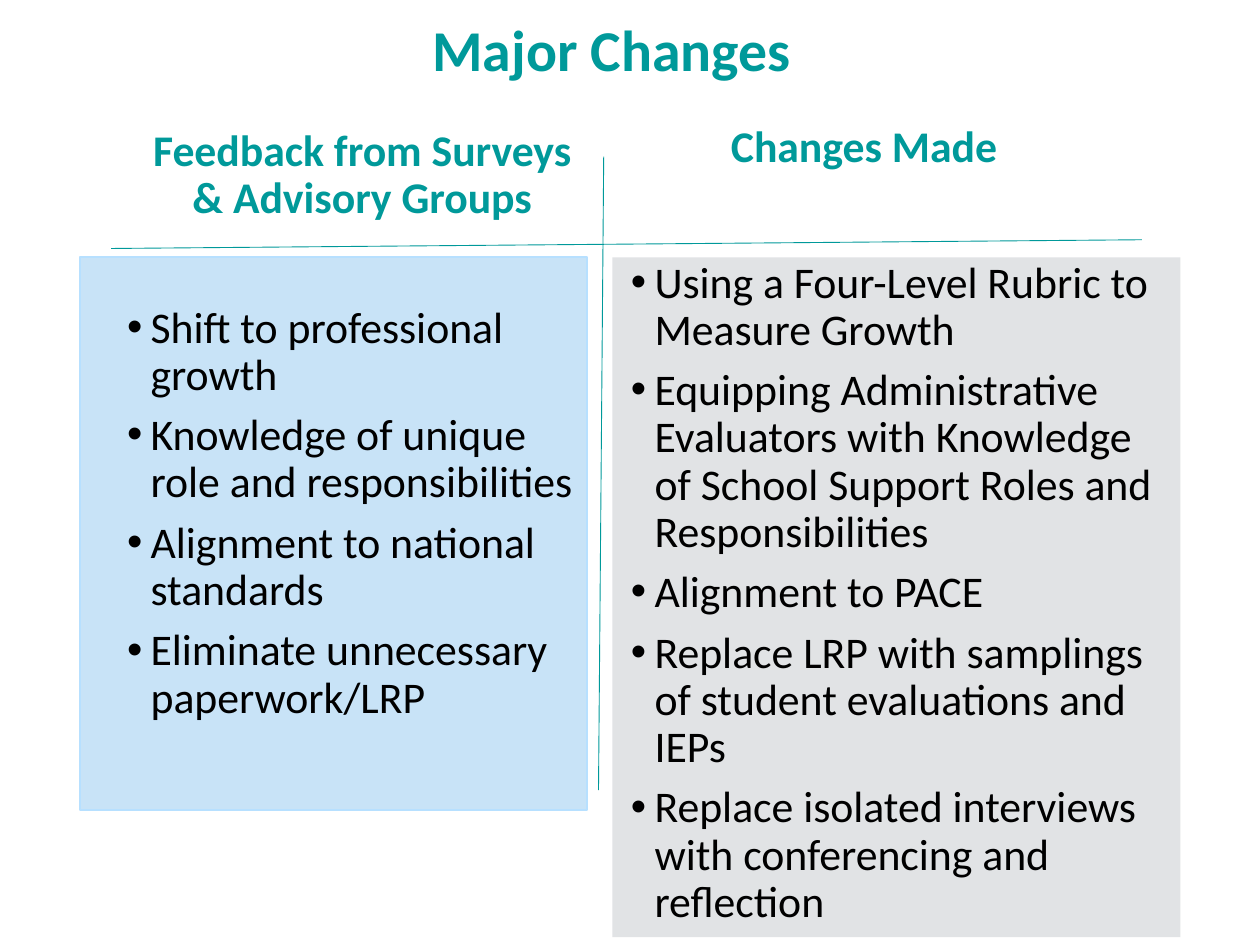
import dataclasses

import lxml.etree
import pptx
import pptx.dml.color
import pptx.enum.shapes
import pptx.enum.text
import pptx.oxml.ns
import pptx.util

Pt = pptx.util.Pt
qn = pptx.oxml.ns.qn
ALIGN = pptx.enum.text.PP_ALIGN
ANCHOR = pptx.enum.text.MSO_ANCHOR


def rgb(value):
    return pptx.dml.color.RGBColor.from_string(value)


@dataclasses.dataclass(frozen=True)
class Theme:
    font: str = "Calibri"
    accent: str = "00999A"
    ink: str = "000000"
    feedback_fill: str = "C8E3F7"
    feedback_line: str = "B7E0FF"
    changes_fill: str = "E1E3E5"
    title_size: float = 33
    body_size: float = 25
    rule_width: float = 0.5
    line_spacing: float = 0.9
    space_before: float = 7.5
    bullet_indent: float = 13.5


class SlideBuilder:
    """Draws styled elements on one slide, with all lengths in points."""

    def __init__(self, slide, theme):
        self.slide = slide
        self.theme = theme

    def panel(self, box, fill, line=None):
        sp = self.slide.shapes.add_shape(
            pptx.enum.shapes.MSO_SHAPE.RECTANGLE, *map(Pt, box))
        sp.shadow.inherit = False
        sp.fill.solid()
        sp.fill.fore_color.rgb = rgb(fill)
        if line:
            sp.line.color.rgb = rgb(line)
            sp.line.width = Pt(1)
        else:
            sp.line.fill.background()

    def text_frame(self, box, anchor, top=4.5):
        tf = self.slide.shapes.add_textbox(*map(Pt, box)).text_frame
        tf.word_wrap = True
        tf.vertical_anchor = anchor
        tf.margin_left = tf.margin_right = Pt(7.2)
        tf.margin_top, tf.margin_bottom = Pt(top), Pt(4.5)
        return tf

    def style(self, p, size, color, bold=False):
        p.font.name = self.theme.font
        p.font.size = Pt(size)
        p.font.bold = bold
        p.font.color.rgb = rgb(color)
        p.line_spacing = self.theme.line_spacing

    def heading(self, box, text, size, anchor=ANCHOR.BOTTOM, indent=None):
        p = self.text_frame(box, anchor).paragraphs[0]
        p.text = text
        self.style(p, size, self.theme.accent, bold=True)
        if indent is None:
            p.alignment = ALIGN.CENTER
        else:
            p.alignment = ALIGN.LEFT
            p._p.get_or_add_pPr().set("marL", str(Pt(indent)))

    def bullets(self, box, items):
        tf = self.text_frame(box, ANCHOR.TOP, top=40)
        indent = Pt(self.theme.bullet_indent)
        for i, item in enumerate(items):
            p = tf.add_paragraph() if i else tf.paragraphs[0]
            p.text = item
            self.style(p, self.theme.body_size, self.theme.ink)
            if i:
                p.space_before = Pt(self.theme.space_before)
            pPr = p._p.get_or_add_pPr()
            pPr.set("marL", str(indent))
            pPr.set("indent", str(-indent))
            bullet_font = lxml.etree.Element(qn("a:buFont"), typeface="Arial")
            bullet = lxml.etree.Element(qn("a:buChar"), char="•")
            pPr.find(qn("a:defRPr")).addprevious(bullet_font)
            bullet_font.addnext(bullet)

    def rule(self, *ends):
        cxn = self.slide.shapes.add_connector(
            pptx.enum.shapes.MSO_CONNECTOR.STRAIGHT, *map(Pt, ends))
        cxn.line.color.rgb = rgb(self.theme.accent)
        cxn.line.width = Pt(self.theme.rule_width)
        lxml.etree.SubElement(cxn._element.spPr, qn("a:effectLst"))


def main():
    prs = pptx.Presentation()
    prs.slide_width, prs.slide_height = Pt(720), Pt(540)
    theme = Theme()
    s = SlideBuilder(prs.slides.add_slide(prs.slide_layouts[6]), theme)

    s.panel((350, 147, 324.5, 388.5), theme.changes_fill)
    s.panel((45.75, 147, 289.5, 316), theme.feedback_fill, theme.feedback_line)

    s.heading((46, 8, 620.5, 44.5), "Major Changes", theme.title_size,
              ANCHOR.MIDDLE, indent=194)
    s.heading((72, 81.5, 270, 50.5), "Feedback from Surveys & Advisory Groups",
              theme.body_size)
    s.bullets((65.5, 134.5, 269.5, 259), [
        "Shift to professional growth",
        "Knowledge of unique role and responsibilities",
        "Alignment to national standards",
        "Eliminate unnecessary paperwork/LRP",
    ])
    s.heading((373.5, 52, 240.5, 50.5), "Changes Made", theme.body_size)
    s.bullets((353.5, 108.75, 324.5, 259), [
        "Using a Four-Level Rubric to Measure Growth",
        "Equipping Administrative Evaluators with Knowledge of School "
        "Support Roles and Responsibilities",
        "Alignment to PACE",
        "Replace LRP with samplings of student evaluations and IEPs",
        "Replace isolated interviews with conferencing and reflection",
    ])

    s.rule(63.5, 142, 652.5, 137)
    s.rule(345, 89.5, 342, 451.5)
    prs.save("out.pptx")


if __name__ == "__main__":
    main()
